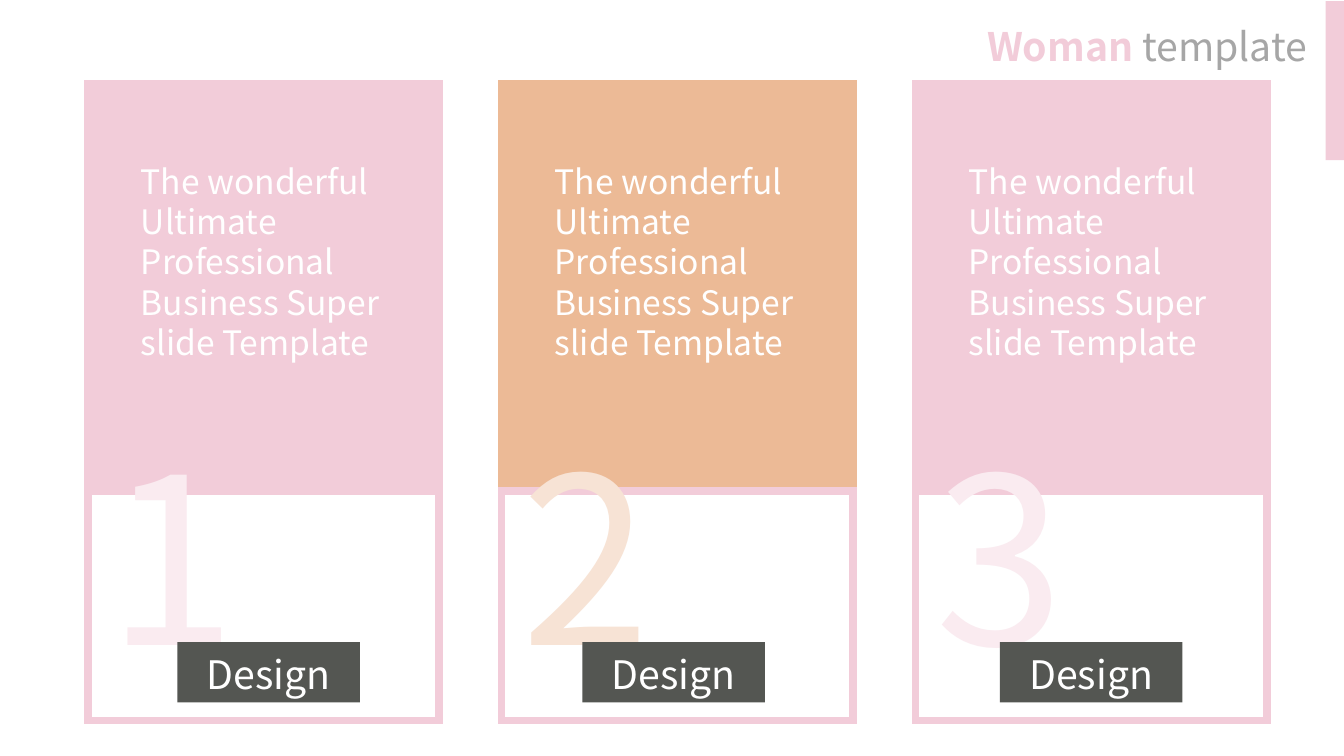
from lxml import etree
from pptx import Presentation
from pptx import util as u
from pptx.dml.color import RGBColor
from pptx.enum import shapes, text
from pptx.oxml import ns

PINK = RGBColor(0xF2, 0xCC, 0xD9)
PALE_PINK = RGBColor(0xFA, 0xEB, 0xF0)
ORANGE = RGBColor(0xEC, 0xBA, 0x96)
PALE_ORANGE = RGBColor(0xF7, 0xE3, 0xD5)
CHARCOAL = RGBColor(0x54, 0x56, 0x52)
GREY = RGBColor(0xA6, 0xA6, 0xA6)
WHITE = RGBColor(0xFF, 0xFF, 0xFF)
FONT = "Noto Sans CJK JP"

SLIDE_WIDTH, SLIDE_HEIGHT = 33.87, 19.05
CARD_LEFT, CARD_TOP, CARD_WIDTH, CARD_HEIGHT = 2.21, 2.11, 8.86, 16.05
CARD_PITCH = 10.43
MESSAGE = "The wonderful Ultimate Professional Business Super slide Template"
CARDS = [
    ("1", PINK, PALE_PINK, 2.26),
    ("2", ORANGE, PALE_ORANGE, 2.04),
    ("3", PINK, PALE_PINK, 2.13),
]


def add_rectangle(slide, box, fill, line=None):
    shape = slide.shapes.add_shape(
        shapes.MSO_SHAPE.RECTANGLE, *[u.Cm(length) for length in box])
    shape.shadow.inherit = False
    shape.fill.solid()
    shape.fill.fore_color.rgb = fill
    if line is None:
        shape.line.fill.background()
    else:
        shape.line.color.rgb = line
        shape.line.width = u.Pt(5.5)
        outline = shape.element.spPr.find(ns.qn("a:ln"))
        etree.SubElement(outline, ns.qn("a:miter")).set("lim", "800000")
    return shape


def write(shape, runs, size, align, wrap=True):
    frame = shape.text_frame
    frame.word_wrap = wrap
    frame.auto_size = text.MSO_AUTO_SIZE.SHAPE_TO_FIT_TEXT
    paragraph = frame.paragraphs[0]
    paragraph.alignment = align
    for words, color, bold in runs:
        run = paragraph.add_run()
        run.text = words
        run.font.name = FONT
        run.font.size = u.Pt(size)
        run.font.bold = bold
        run.font.color.rgb = color


def add_text(slide, box, runs, size, align=text.PP_ALIGN.LEFT, wrap=True):
    shape = slide.shapes.add_textbox(*[u.Cm(length) for length in box])
    write(shape, runs, size, align, wrap)


def add_tag(slide, box):
    tag = add_rectangle(slide, box, CHARCOAL)
    tag.text_frame.margin_top = u.Cm(0.2)
    tag.text_frame.vertical_anchor = text.MSO_ANCHOR.TOP
    write(tag, [("Design", WHITE, False)], 28, text.PP_ALIGN.CENTER)


def add_card(slide, box, number, color, pale_color, tag_offset):
    left, top, width, height = box
    panel_height, frame_height = 10.21, 5.79
    add_rectangle(slide, (left, top, width, panel_height), color, color)
    add_rectangle(slide, (left, top + height - frame_height, width, frame_height),
                  WHITE, PINK)
    add_text(slide, (left + 0.25, top + 8.18, 4.19, 7.34),
             [(number, pale_color, False)], 166, wrap=False)
    add_tag(slide, (left + tag_offset, top + 14.07, 4.6, 1.52))
    add_text(slide, (left + 1.09, top + 1.81, 6.71, 6.4),
             [(MESSAGE, WHITE, False)], 24)


def add_header(slide, box):
    left, top, width, height = box
    bar_width = 0.46
    add_rectangle(slide, (left + width - bar_width, top, bar_width, height), PINK)
    add_text(slide, (left, top + 0.4, 9.13, 1.45),
             [("Woman ", PINK, True), ("template", GREY, False)],
             28, text.PP_ALIGN.RIGHT, wrap=False)


def main():
    presentation = Presentation()
    presentation.slide_width = u.Cm(SLIDE_WIDTH)
    presentation.slide_height = u.Cm(SLIDE_HEIGHT)
    slide = presentation.slides.add_slide(presentation.slide_layouts[6])
    for index, card in enumerate(CARDS):
        left = CARD_LEFT + index * CARD_PITCH
        add_card(slide, (left, CARD_TOP, CARD_WIDTH, CARD_HEIGHT), *card)
    add_header(slide, (24.06, 0.03, SLIDE_WIDTH - 24.06, 4.01))
    presentation.save("out.pptx")


if __name__ == "__main__":
    main()
